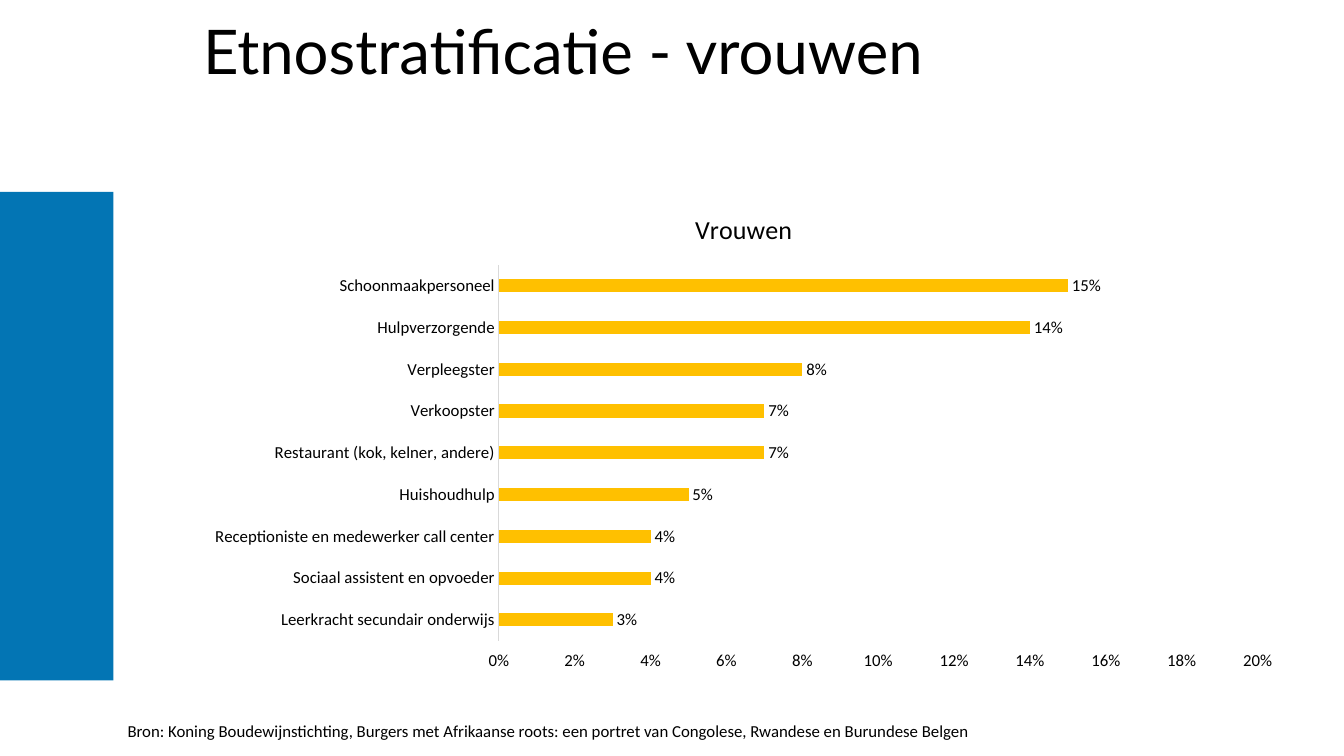
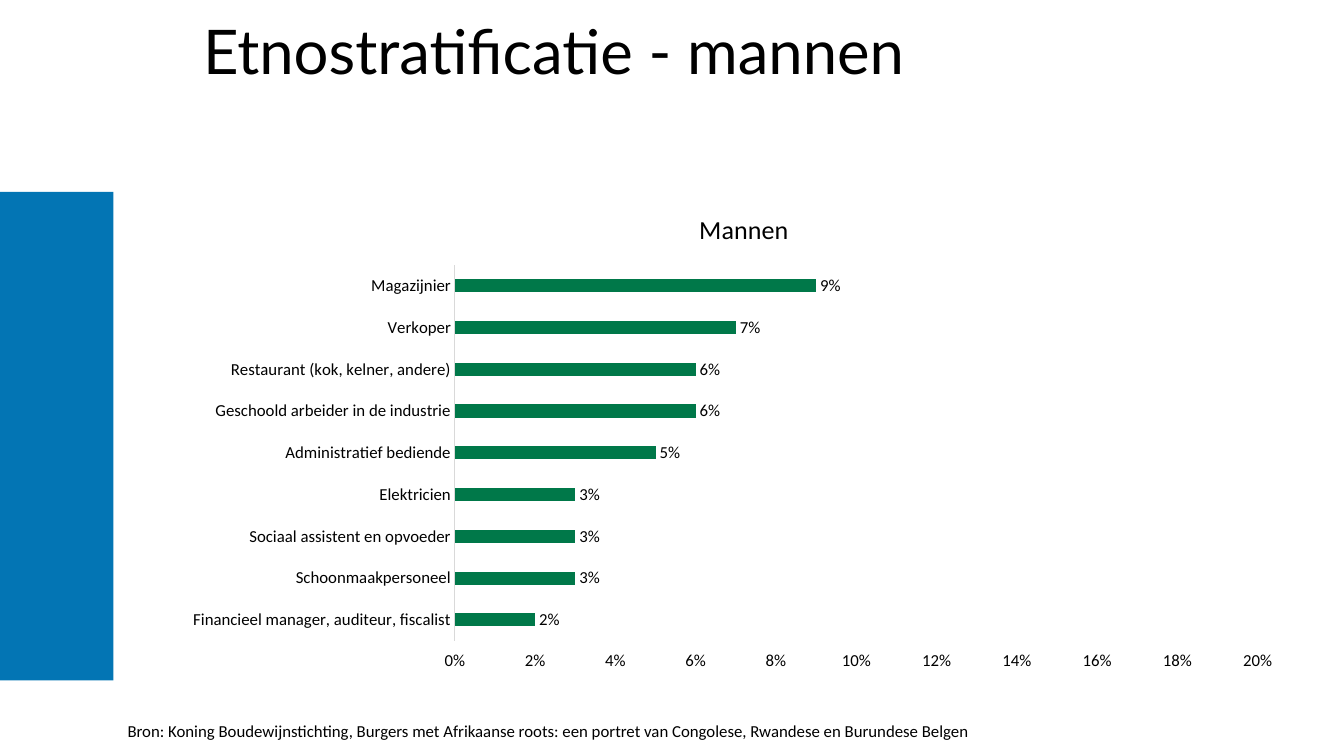
from pptx import Presentation
from pptx.chart.data import CategoryChartData
from pptx.dml.color import RGBColor
from pptx.enum.chart import XL_CHART_TYPE, XL_LABEL_POSITION, XL_TICK_LABEL_POSITION, XL_TICK_MARK
from pptx.enum.shapes import MSO_SHAPE
from pptx.enum.text import MSO_ANCHOR
from pptx.util import Pt

COLORS = {"text": "000000", "band": "0375B4", "axis": "D9D9D9",
          "women": "FFC000", "men": "007849"}
TITLE_FONT, BODY_FONT = "Lato", "Calibri"
SOURCE = ("Bron: Koning Boudewijnstichting, Burgers met Afrikaanse roots: "
          "een portret van Congolese, Rwandese en Burundese Belgen")

SLIDES = [
    {"title": "Etnostratificatie - vrouwen", "chart_title": "Vrouwen", "color": "women",
     "shares": [("Schoonmaakpersoneel", 0.15),
                ("Hulpverzorgende", 0.14),
                ("Verpleegster", 0.08),
                ("Verkoopster", 0.07),
                ("Restaurant (kok, kelner, andere)", 0.07),
                ("Huishoudhulp", 0.05),
                ("Receptioniste en medewerker call center", 0.04),
                ("Sociaal assistent en opvoeder", 0.04),
                ("Leerkracht secundair onderwijs", 0.03)]},
    {"title": "Etnostratificatie - mannen", "chart_title": "Mannen", "color": "men",
     "shares": [("Magazijnier", 0.09),
                ("Verkoper", 0.07),
                ("Restaurant (kok, kelner, andere)", 0.06),
                ("Geschoold arbeider in de industrie", 0.06),
                ("Administratief bediende", 0.05),
                ("Elektricien", 0.03),
                ("Sociaal assistent en opvoeder", 0.03),
                ("Schoonmaakpersoneel", 0.03),
                ("Financieel manager, auditeur, fiscalist", 0.02)]},
]

SLIDE_WIDTH, SLIDE_HEIGHT = 960, 540
CONTENT_LEFT, CONTENT_TOP = 138, 137
CONTENT_WIDTH, CONTENT_HEIGHT = 786.5, 349
BAND_WIDTH = 81
TITLE_HEIGHT = 78
SOURCE_BOX = (84, 511, 840, 22)


def rgb(name):
    return RGBColor.from_string(COLORS[name])


def style_font(font, size, name=BODY_FONT):
    font.size = Pt(size)
    font.name = name
    font.bold = False
    font.color.rgb = rgb("text")


def add_text(slide, text, box, size, font_name=BODY_FONT, anchor=MSO_ANCHOR.TOP, line_spacing=1.0):
    text_frame = slide.shapes.add_textbox(*map(Pt, box)).text_frame
    text_frame.word_wrap = True
    text_frame.vertical_anchor = anchor
    text_frame.text = text
    paragraph = text_frame.paragraphs[0]
    paragraph.line_spacing = line_spacing
    style_font(paragraph.runs[0].font, size, font_name)


def add_band(slide):
    band = slide.shapes.add_shape(MSO_SHAPE.RECTANGLE, 0, Pt(CONTENT_TOP),
                                  Pt(BAND_WIDTH), Pt(CONTENT_HEIGHT))
    band.shadow.inherit = False
    band.fill.solid()
    band.fill.fore_color.rgb = rgb("band")
    band.line.fill.background()


def style_axis(axis):
    axis.has_major_gridlines = False
    axis.major_tick_mark = axis.minor_tick_mark = XL_TICK_MARK.NONE
    style_font(axis.tick_labels.font, 12)


def add_share_chart(slide, title, shares, color):
    chart_data = CategoryChartData(number_format="0%")
    chart_data.categories = [job for job, _ in shares]
    chart_data.add_series("Series 1", [share for _, share in shares])
    box = (CONTENT_LEFT, CONTENT_TOP, CONTENT_WIDTH, CONTENT_HEIGHT)
    chart = slide.shapes.add_chart(XL_CHART_TYPE.BAR_CLUSTERED, *map(Pt, box), chart_data).chart
    style_font(chart.font, 10)
    chart.has_legend = False
    chart.has_title = True
    chart.chart_title.include_in_layout = False
    chart.chart_title.text_frame.text = title
    style_font(chart.chart_title.text_frame.paragraphs[0].runs[0].font, 18.6)

    jobs = chart.category_axis
    style_axis(jobs)
    jobs.reverse_order = True
    jobs.format.line.color.rgb = rgb("axis")
    jobs.format.line.width = Pt(0.75)

    percentages = chart.value_axis
    style_axis(percentages)
    percentages.tick_label_position = XL_TICK_LABEL_POSITION.HIGH
    percentages.minimum_scale, percentages.maximum_scale = 0, 0.2
    percentages.major_unit = 0.02
    percentages.tick_labels.number_format = "0%"
    percentages.tick_labels.number_format_is_linked = False
    percentages.format.line.fill.background()

    plot = chart.plots[0]
    plot.gap_width = 219
    plot.vary_by_categories = False
    bars = plot.series[0]
    bars.format.fill.solid()
    bars.format.fill.fore_color.rgb = rgb(color)
    labels = bars.data_labels
    labels.show_value = True
    labels.position = XL_LABEL_POSITION.OUTSIDE_END
    labels.number_format = "0%"
    labels.number_format_is_linked = False
    style_font(labels.font, 12)


def main():
    presentation = Presentation()
    presentation.slide_width, presentation.slide_height = Pt(SLIDE_WIDTH), Pt(SLIDE_HEIGHT)
    for content in SLIDES:
        slide = presentation.slides.add_slide(presentation.slide_layouts[6])
        add_band(slide)
        add_text(slide, content["title"], (CONTENT_LEFT, 0, CONTENT_WIDTH, TITLE_HEIGHT),
                 44, TITLE_FONT, MSO_ANCHOR.MIDDLE, 0.9)
        add_share_chart(slide, content["chart_title"], content["shares"], content["color"])
        add_text(slide, SOURCE, SOURCE_BOX, 12)
    presentation.save("out.pptx")


if __name__ == "__main__":
    main()
